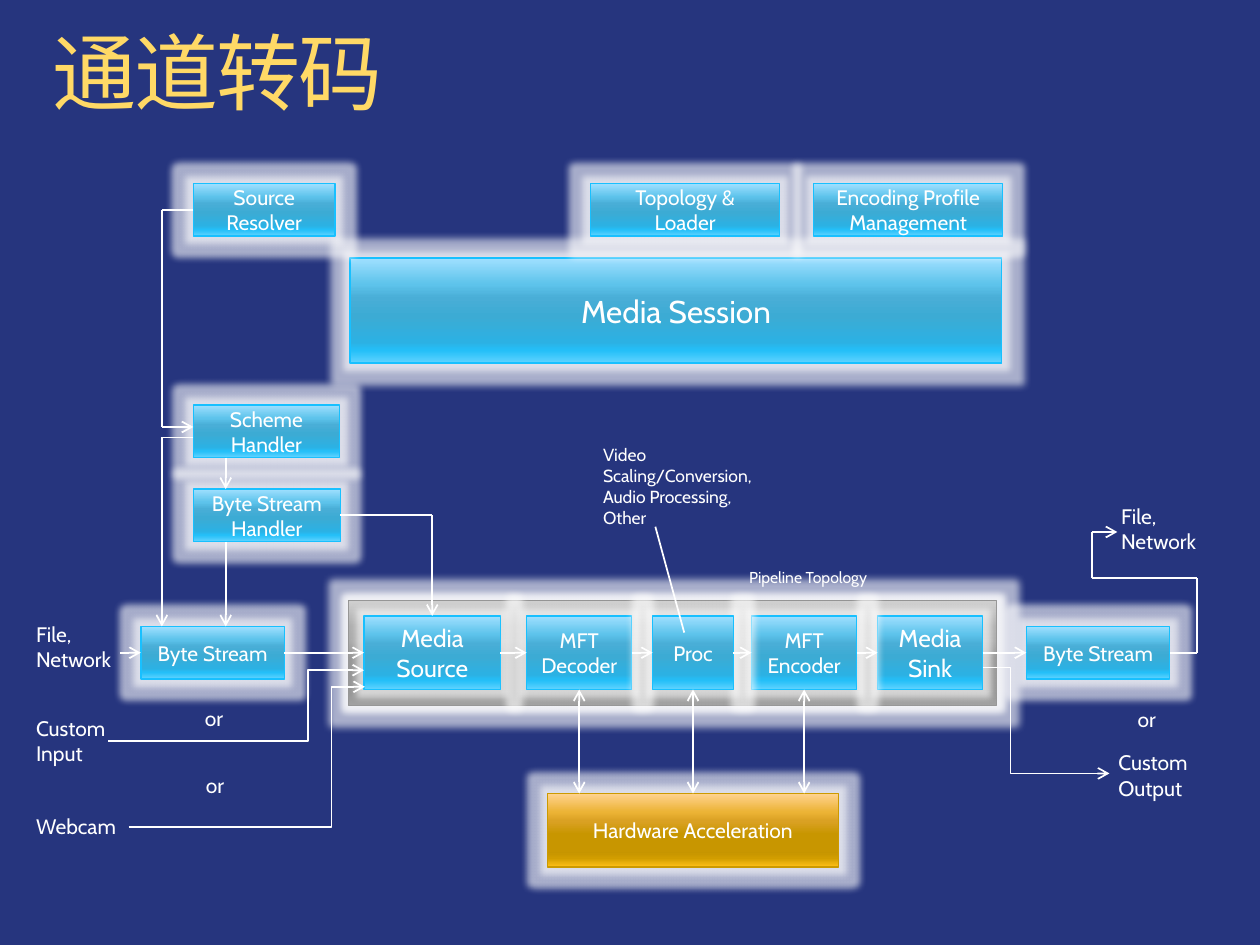
"""Build the transcoding pipeline diagram slide."""
from lxml import etree
from pptx import Presentation
from pptx.dml import color
from pptx.enum import shapes, text
from pptx.oxml import ns
from pptx.util import Pt

THEME = {
    "font": "Cabin",
    "background": "26357E",
    "ink": "FFFFFF",
    "glow": {"radius": 8, "color": "FFFFFF", "alpha": 60},
    "sizes": {"title": 48, "session": 18, "stage": 14, "body": 12, "note": 10, "small": 9},
    "border": 0.75,
    "link": 1,
    "title": [(0, "FFF2CC"), (41, "FFD966"), (100, "FFC000")],
    "blue": {"line": "18C0FF", "stops": [
        (0, "A0E0FF"), (25, "5DC3EB"), (38, "49AED7"), (55, "3CABD4"),
        (80, "2CB1E3"), (88, "24BFF8"), (100, "5FD3FF")]},
    "black": {"line": "000000", "stops": [
        (0, "909090"), (25, "393939"), (38, "323232"), (55, "000000"),
        (80, "000000"), (88, "000000"), (100, "181818")]},
    "gold": {"line": "CC9A00", "stops": [
        (0, "FFD390"), (25, "ECB335"), (38, "DAA123"), (55, "C89600"),
        (80, "C69500"), (88, "D19D00"), (100, "FFC018")]},
}

TITLE = ("通道转码", 30, 18, 660, 53)

# name: (label, palette, size, left, top, width, height)
BOXES = {
    "stream out": ("Byte Stream", "blue", "body", 586.5, 358, 82, 30),
    "pipeline": ("", "black", "body", 199, 343, 370.5, 60),
    "session": ("Media Session", "blue", "session", 200, 147.5, 372.5, 60),
    "resolver": ("Source Resolver", "blue", "body", 110.5, 105, 81, 30),
    "source": ("Media Source", "blue", "stage", 208, 352, 78, 42),
    "scheme": ("Scheme Handler", "blue", "body", 110.5, 231.5, 83.5, 30),
    "stream in": ("Byte Stream", "blue", "body", 80.5, 358, 82, 30),
    "handler": ("Byte Stream Handler", "blue", "body", 110.5, 279.5, 84, 30),
    "decoder": ("MFT Decoder", "blue", "body", 301, 352, 60, 42),
    "sink": ("Media Sink", "blue", "stage", 501.5, 352, 60, 42),
    "hardware": ("Hardware Acceleration", "gold", "body", 313, 453.5, 166, 42),
    "topology": ("Topology & Loader", "blue", "body", 337.5, 105, 108, 30),
    "encoder": ("MFT Encoder", "blue", "body", 429.5, 352, 60, 42),
    "proc": ("Proc", "blue", "body", 373, 352, 46, 42),
    "profile": ("Encoding Profile Management", "blue", "body", 465, 105, 108, 30),
}

# (paragraphs, size, left, top, width, height, wrap)
LABELS = [
    (["File,", "Network"], "body", 13.5, 351.5, 60, 36, True),
    (["Custom Input"], "body", 13.5, 405.5, 60, 36, True),
    (["Webcam"], "body", 13.5, 461.5, 60, 21.5, True),
    (["Custom Output"], "body", 632, 425, 60, 36, True),
    (["File,", "Network"], "body", 633.5, 284, 60, 36, True),
    (["Pipeline Topology"], "small", 421, 321, 102, 18, True),
    (["Video Scaling/Conversion, Audio Processing, Other"], "note", 337.5, 250, 106, 55, True),
    (["or"], "body", 110, 399.5, 26, 21.5, False),
    (["or"], "body", 110.5, 438, 26, 21.5, False),
    (["or"], "body", 643, 400, 26, 21.5, False),
]

TOP, LEFT, BOTTOM, RIGHT = range(4)
STAGES = ["stream in", "source", "decoder", "proc", "encoder", "sink", "stream out"]

# (ends and corners, arrowheads); an end is a point or a (box, side) pair
PATHS = [([(one, RIGHT), (two, LEFT)], ["tail"]) for one, two in zip(STAGES, STAGES[1:])] + [
    ([("decoder", BOTTOM), (331, 453.5)], ["head", "tail"]),
    ([("proc", BOTTOM), ("hardware", TOP)], ["head", "tail"]),
    ([("encoder", BOTTOM), (459.5, 453.5)], ["head", "tail"]),
    ([("resolver", LEFT), (92.5, 120), (92.5, 244), (110.5, 244)], ["tail"]),
    ([(110.5, 250), (92.5, 250), (92.5, 358)], ["tail"]),
    ([(129, 261.5), (129, 279.5)], ["tail"]),
    ([(129, 309.5), (129, 358)], ["tail"]),
    ([("handler", RIGHT), (247, 294.5), ("source", TOP)], ["tail"]),
    ([(68.5, 373), ("stream in", LEFT)], ["tail"]),
    ([("stream out", RIGHT), (684, 373), (684, 330.5), (624, 330.5),
      (624, 304), (638.5, 304)], ["tail"]),
    ([(374.5, 301), (391, 361.5)], []),
]

# (start, end, x of the bend)
ELBOWS = [
    ((62, 423.5), (208, 383), 176),
    ((562, 381.5), (634, 442), 577.5),
    ((73.5, 472.5), (208.5, 392.5), 189.5),
]


def rgb(value):
    """Return a colour object for a hex string."""
    return color.RGBColor.from_string(value)


def assign(target, **values):
    """Set each named attribute on the target."""
    for name, value in values.items():
        setattr(target, name, value)


def element(parent, tag, **attributes):
    """Append a drawing element and return it."""
    return etree.SubElement(parent, ns.qn("a:" + tag), attributes)


def paint_gradient(fill, holder, stops):
    """Fill from top to bottom with the given stops."""
    fill.gradient()
    fill.gradient_angle = 270
    stop_list = holder.find(".//" + ns.qn("a:gsLst"))
    for child in list(stop_list):
        stop_list.remove(child)
    for position, value in stops:
        stop = element(stop_list, "gs", pos=str(position * 1000))
        element(stop, "srgbClr", val=value)


def write(frame, lines, size, align):
    """Write one paragraph for each line and return the last span."""
    for index, line in enumerate(lines):
        para = frame.paragraphs[0] if index == 0 else frame.add_paragraph()
        para.alignment = align
        span = para.add_run()
        span.text = line
        assign(span.font, name=THEME["font"], size=Pt(THEME["sizes"][size]))
        span.font.color.rgb = rgb(THEME["ink"])
    return span


def add_box(page, label, palette, size, *place):
    """Add a glowing rectangle with a gradient fill."""
    box = page.shapes.add_shape(shapes.MSO_SHAPE.RECTANGLE, *map(Pt, place))
    colors, glow = THEME[palette], THEME["glow"]
    paint_gradient(box.fill, box._element.spPr, colors["stops"])
    box.line.color.rgb = rgb(colors["line"])
    box.line.width = Pt(THEME["border"])
    box.shadow.inherit = False
    effects = box._element.spPr.find(ns.qn("a:effectLst"))
    halo = element(effects, "glow", rad=str(Pt(glow["radius"])))
    tint = element(halo, "srgbClr", val=glow["color"])
    element(tint, "alpha", val=str(glow["alpha"] * 1000))
    if label:
        assign(box.text_frame, word_wrap=True, vertical_anchor=text.MSO_ANCHOR.MIDDLE)
        write(box.text_frame, [label], size, text.PP_ALIGN.CENTER)
    return box


def add_label(page, lines, size, left, top, width, height, wrap):
    """Add a text box and return its frame and last span."""
    box = page.shapes.add_textbox(*map(Pt, (left, top, width, height)))
    assign(box.text_frame, word_wrap=wrap, auto_size=text.MSO_AUTO_SIZE.SHAPE_TO_FIT_TEXT)
    return box.text_frame, write(box.text_frame, lines, size, text.PP_ALIGN.LEFT)


def add_title(page):
    """Add the slide title."""
    label, *place = TITLE
    frame, span = add_label(page, [label], "title", *place, True)
    assign(frame, margin_left=0, margin_top=0, margin_right=0, margin_bottom=0)
    frame.paragraphs[0].line_spacing = 0.9
    holder = span.font._element
    paint_gradient(span.font.fill, holder, THEME["title"])
    holder.set("spc", "-120")


def add_link(page, kind, start, end, heads, boxes):
    """Add one connector, joined to a box wherever an end names one."""
    ends = [(0, 0) if isinstance(point[0], str) else point for point in (start, end)]
    link = page.shapes.add_connector(kind, *(Pt(value) for point in ends for value in point))
    for point, join in ((start, link.begin_connect), (end, link.end_connect)):
        if isinstance(point[0], str):
            join(boxes[point[0]], point[1])
    link.line.color.rgb = rgb(THEME["ink"])
    link.line.width = Pt(THEME["link"])
    for head in heads:
        element(link.line._get_or_add_ln(), head + "End", type="arrow")
    element(link._element.spPr, "effectLst")
    return link


def main():
    """Build and save the deck."""
    deck = Presentation()
    assign(deck, slide_width=Pt(720), slide_height=Pt(540))
    page = deck.slides.add_slide(deck.slide_layouts[6])
    page.background.fill.solid()
    page.background.fill.fore_color.rgb = rgb(THEME["background"])
    add_title(page)
    boxes = {name: add_box(page, *values) for name, values in BOXES.items()}
    for points, heads in PATHS:
        for index in range(1, len(points)):
            last = index == len(points) - 1
            add_link(page, shapes.MSO_CONNECTOR.STRAIGHT, points[index - 1], points[index],
                     heads if last else [], boxes)
    for start, end, bend in ELBOWS:
        link = add_link(page, shapes.MSO_CONNECTOR.ELBOW, start, end, ["tail"], boxes)
        ratio = round((bend - start[0]) / (end[0] - start[0]) * 100000)
        guides = link._element.spPr.find(".//" + ns.qn("a:avLst"))
        element(guides, "gd", name="adj1", fmla=f"val {ratio}")
    for label in LABELS:
        add_label(page, *label)
    deck.save("out.pptx")


if __name__ == "__main__":
    main()
